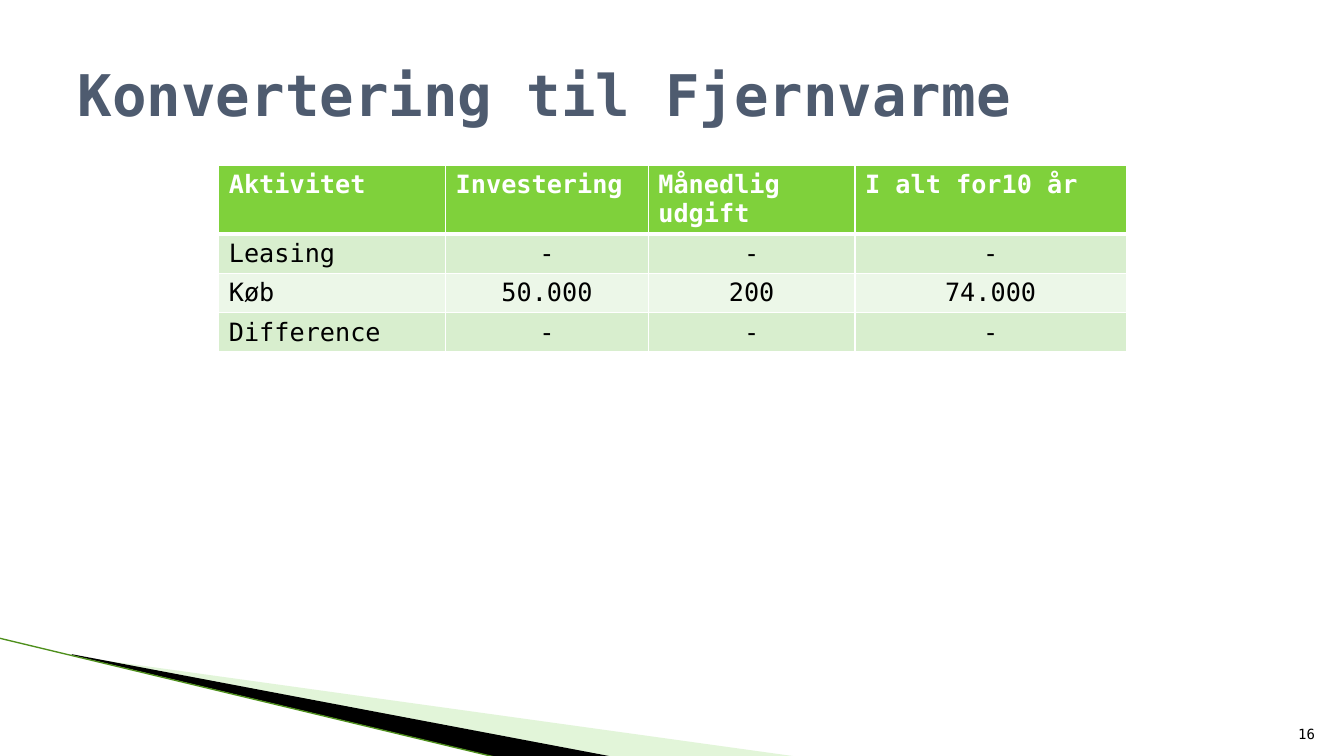
from dataclasses import dataclass

from lxml import etree
from pptx import Presentation, util as u
from pptx.dml.color import RGBColor
from pptx.enum import shapes, text
from pptx.oxml import ns

WHITE = RGBColor(0xFF, 0xFF, 0xFF)
BLACK = RGBColor(0, 0, 0)
SLATE = RGBColor(0x4E, 0x5B, 0x6F)
GREEN = RGBColor(0x7F, 0xD1, 0x3B)
DARK_GREEN = RGBColor(0x4E, 0x8F, 0x1C)
PALE_GREEN = RGBColor(0xB8, 0xE7, 0xA1)
BAND_DARK = RGBColor(0xD8, 0xEE, 0xCE)
BAND_LIGHT = RGBColor(0xEC, 0xF7, 0xE8)

FONT = "DejaVu Sans Mono"
WIDTH, HEIGHT = u.Inches(13.33), u.Inches(7.5)
LEFT, CENTER, RIGHT = text.PP_ALIGN.LEFT, text.PP_ALIGN.CENTER, text.PP_ALIGN.RIGHT
TOP, MIDDLE, BOTTOM = text.MSO_ANCHOR.TOP, text.MSO_ANCHOR.MIDDLE, text.MSO_ANCHOR.BOTTOM

COLUMN_SHARES = (16.88, 15.08, 15.38, 20.18)
ROW_SHARES = (8.93, 5.2, 5.2, 5.2)
COSTS = (
    ("Aktivitet", "Investering", "Månedlig udgift", "I alt for10 år"),
    ("Leasing", "-", "-", "-"),
    ("Køb", "50.000", "200", "74.000"),
    ("Difference", "-", "-", "-"),
)


@dataclass(frozen=True)
class Wedge:
    corners: tuple[tuple[float, float], ...]
    color: RGBColor
    opacity: int = 100


WEDGES = (
    Wedge(((5.48, 86.8), (59.49, 100.13), (45.61, 100.13), (5.48, 86.67)), PALE_GREEN, 40),
    Wedge(((5.33, 86.53), (45.69, 100.13), (37.21, 100.27), (5.4, 86.67)), BLACK),
)


def across(share: float) -> int:
    return round(WIDTH * share / 100)


def down(share: float) -> int:
    return round(HEIGHT * share / 100)


def area(left: float, top: float, width: float, height: float) -> tuple[int, ...]:
    return across(left), down(top), across(width), down(height)


def write(frame, content: str, *, size: float, color: RGBColor = BLACK,
          bold: bool = False, align=LEFT) -> None:
    frame.word_wrap = True
    paragraph = frame.paragraphs[0]
    paragraph.alignment = align
    run = paragraph.add_run()
    run.text = content
    run.font.name = FONT
    run.font.size = u.Pt(size)
    run.font.bold = bold
    run.font.color.rgb = color


def add_wedge(slide, wedge: Wedge) -> None:
    points = [(across(x), down(y)) for x, y in wedge.corners]
    builder = slide.shapes.build_freeform(*points[0])
    builder.add_line_segments(points[1:], close=True)
    shape = builder.convert_to_shape()
    shape.shadow.inherit = False
    shape.line.fill.background()
    shape.fill.solid()
    shape.fill.fore_color.rgb = wedge.color
    if wedge.opacity < 100:
        tint = shape.fill._xPr.find(".//" + ns.qn("a:srgbClr"))
        etree.SubElement(tint, ns.qn("a:alpha"), val=str(wedge.opacity * 1000))


def add_edge(slide) -> None:
    edge = slide.shapes.add_connector(
        shapes.MSO_CONNECTOR.STRAIGHT,
        across(-0.08), down(84.4), across(37.13), down(100.27))
    edge.line.color.rgb = DARK_GREEN
    edge.line.width = u.Pt(0.95)
    etree.SubElement(edge._element.spPr, ns.qn("a:effectLst"))


def set_borders(cell, **widths: float) -> None:
    properties = cell._tc.get_or_add_tcPr()
    for position, side in enumerate("LRTB"):
        line = etree.Element(ns.qn(f"a:ln{side}"), w=str(u.Pt(widths.get(side, 1))))
        fill = etree.SubElement(line, ns.qn("a:solidFill"))
        etree.SubElement(fill, ns.qn("a:srgbClr"), val=str(WHITE))
        properties.insert(position, line)


def add_costs(slide) -> None:
    table = slide.shapes.add_table(
        len(COSTS), len(COLUMN_SHARES),
        *area(16.28, 21.87, sum(COLUMN_SHARES), sum(ROW_SHARES))).table
    for column, share in zip(table.columns, COLUMN_SHARES):
        column.width = across(share)
    for row, (share, entries) in enumerate(zip(ROW_SHARES, COSTS)):
        table.rows[row].height = down(share)
        header = row == 0
        band = GREEN if header else (BAND_LIGHT, BAND_DARK)[row % 2]
        for column, entry in enumerate(entries):
            cell = table.cell(row, column)
            cell.vertical_anchor = TOP
            cell.fill.solid()
            cell.fill.fore_color.rgb = band
            set_borders(cell, T=3 if row == 1 else 1, B=3 if header else 1)
            write(cell.text_frame, entry, size=18, bold=header,
                  color=WHITE if header else BLACK,
                  align=LEFT if header or column == 0 else CENTER)


def main() -> None:
    deck = Presentation()
    deck.slide_width, deck.slide_height = WIDTH, HEIGHT
    slide = deck.slides.add_slide(deck.slide_layouts[5])

    for wedge in WEDGES:
        add_wedge(slide, wedge)
    add_edge(slide)
    add_costs(slide)

    heading = slide.shapes.title
    heading.left, heading.top, heading.width, heading.height = area(5.03, 4, 90.02, 16.67)
    heading.text_frame.auto_size = text.MSO_AUTO_SIZE.NONE
    heading.text_frame.vertical_anchor = MIDDLE
    write(heading.text_frame, "Konvertering til Fjernvarme", size=41, color=SLATE, bold=True)

    page_number = slide.shapes.add_textbox(*area(94.6, 93.47, 3.98, 5.33))
    page_number.text_frame.vertical_anchor = BOTTOM
    write(page_number.text_frame, "16", size=10, align=RIGHT)

    deck.save("out.pptx")


if __name__ == "__main__":
    main()
